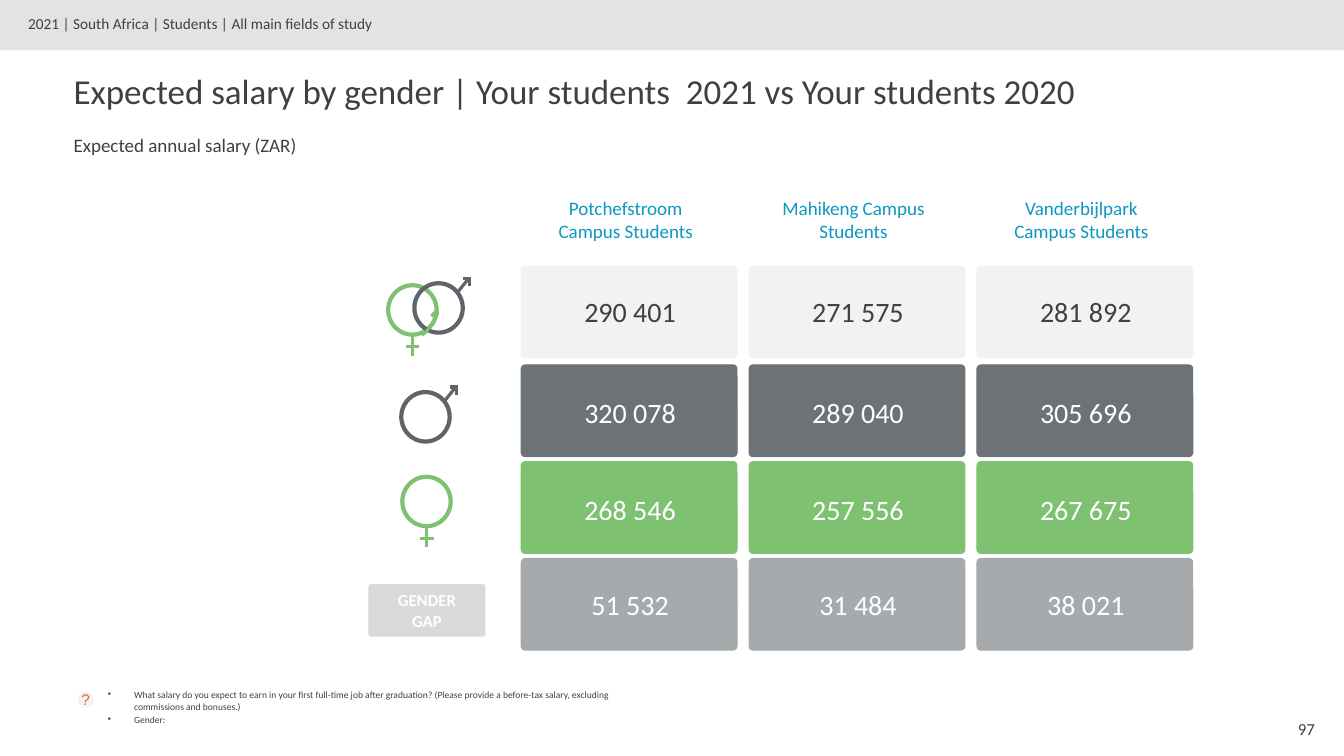
from dataclasses import dataclass

from lxml import etree
from pptx import Presentation
from pptx.dml.color import RGBColor
from pptx.enum.shapes import MSO_CONNECTOR as Connector
from pptx.enum.shapes import MSO_SHAPE as Shape
from pptx.enum.text import MSO_ANCHOR as Anchor
from pptx.enum.text import PP_ALIGN as Align
from pptx.oxml.ns import qn
from pptx.util import Inches, Pt


@dataclass(frozen=True)
class Theme:
    font: str = "Calibri"
    symbol_font: str = "Arial"
    text: str = "414041"
    white: str = "FFFFFF"
    band: str = "E2E3E4"
    badge: str = "F3F3F3"
    question: str = "F1612A"
    heading: str = "0E97C1"
    label: str = "D9D9D9"
    total: str = "F2F2F2"
    male: str = "6D7276"
    male_line: str = "5F636A"
    female: str = "7EC170"
    gap: str = "A7AAAD"
    title_size: float = 25
    value_size: float = 20
    heading_size: float = 13.6
    label_size: float = 12
    badge_size: float = 11
    crumb_size: float = 10.9
    note_size: float = 6.8


def write(frame, text, *, size, color, font, align=Align.LEFT, anchor=Anchor.TOP,
          bold=False, side=0.1, wrap=True, bullet_indent=0, gap=0):
    """Fill a text frame, with one paragraph for each line of text."""
    frame.word_wrap = wrap
    frame.vertical_anchor = anchor
    frame.margin_left = frame.margin_right = Inches(side)
    frame.margin_top = frame.margin_bottom = Inches(0.05)
    for index, line in enumerate(text.split("\n")):
        para = frame.paragraphs[0] if index == 0 else frame.add_paragraph()
        if bullet_indent:
            properties = para._p.get_or_add_pPr()
            properties.set("marL", str(Inches(bullet_indent)))
            properties.set("indent", str(-Inches(bullet_indent)))
            etree.SubElement(properties, qn("a:buChar")).set("char", "•")
        if index and gap:
            para.space_before = Pt(gap)
        para.alignment = align
        span = para.add_run()
        span.text = line
        span.font.name = font
        span.font.size = Pt(size)
        span.font.bold = bold
        span.font.color.rgb = RGBColor.from_string(color)


class SlideBuilder:
    def __init__(self, slide, theme):
        self.shapes = slide.shapes
        self.theme = theme

    def text(self, left, top, width, height, text, **style):
        box = self.shapes.add_textbox(*map(Inches, (left, top, width, height)))
        write(box.text_frame, text,
              **{"font": self.theme.font, "color": self.theme.text, **style})

    def shape(self, kind, left, top, width, height, fill=None, line=None, weight=0.75):
        shape = self.shapes.add_shape(kind, *map(Inches, (left, top, width, height)))
        shape.shadow.inherit = False
        if fill:
            shape.fill.solid()
            shape.fill.fore_color.rgb = RGBColor.from_string(fill)
        else:
            shape.fill.background()
        if line:
            shape.line.color.rgb = RGBColor.from_string(line)
            shape.line.width = Pt(weight)
        else:
            shape.line.fill.background()
        return shape

    def card(self, left, top, width, height, color):
        card = self.shape(Shape.ROUNDED_RECTANGLE, left, top, width, height, color, color)
        card.adjustments[0] = 0.043
        return card

    def line(self, x1, y1, x2, y2, color):
        line = self.shapes.add_connector(Connector.STRAIGHT, *map(Inches, (x1, y1, x2, y2)))
        line.line.color.rgb = RGBColor.from_string(color)
        line.line.width = Pt(2.25)
        etree.SubElement(line._element.spPr, qn("a:effectLst"))

    def gender_sign(self, left, top, color, strokes):
        """Draw a ring and its strokes, which are given relative to the ring's corner."""
        self.shape(Shape.FLOWCHART_CONNECTOR, left, top, 0.48, 0.49, line=color, weight=3)
        for x1, y1, x2, y2 in strokes:
            self.line(left + x1, top + y1, left + x2, top + y2, color)

    def male_sign(self, left, top):
        self.gender_sign(left, top, self.theme.male_line, [
            (0.48, -0.05, 0.56, -0.05), (0.55, -0.06, 0.55, 0.03), (0.54, -0.05, 0.42, 0.1)])

    def female_sign(self, left, top):
        self.gender_sign(left, top, self.theme.female, [
            (0.24, 0.49, 0.24, 0.7), (0.18, 0.61, 0.31, 0.61)])

    def ring_overlap(self):
        """Bring the female ring back over the male ring where they cross."""
        arc = self.shape(Shape.ARC, 4.12, 3.18, 0.28, 0.05,
                         line=self.theme.female, weight=2.25)
        arc.adjustments[0] = 161.64 * 0.6
        arc.adjustments[1] = 0
        arc.rotation = 123.6


CAMPUSES = [
    ("Potchefstroom Campus Students", ["290 401", "320 078", "268 546", "51 532"]),
    ("Mahikeng Campus Students", ["271 575", "289 040", "257 556", "31 484"]),
    ("Vanderbijlpark Campus Students", ["281 892", "305 696", "267 675", "38 021"]),
]


def add_frame(page, theme):
    page.shape(Shape.RECTANGLE, 0, 0, 13.33, 0.5, theme.band)
    page.text(0.17, 0.09, 11.36, 0.31,
              "2021 | South Africa | Students | All main fields of study",
              size=theme.crumb_size, side=0.11)
    page.text(0.62, 0.64, 12.55, 0.62,
              "Expected salary by gender | Your students  2021 vs Your students 2020",
              size=theme.title_size, side=0.11)
    page.text(0.62, 1.28, 12.54, 0.36, "Expected annual salary (ZAR)",
              size=theme.heading_size, side=0.11)
    badge = page.shape(Shape.FLOWCHART_CONNECTOR, 0.77, 6.86, 0.16, 0.16, theme.badge)
    write(badge.text_frame, "?", size=theme.badge_size, color=theme.question,
          font=theme.symbol_font, align=Align.CENTER, anchor=Anchor.MIDDLE,
          side=0.11, wrap=False)
    page.text(0.96, 6.79, 5.51, 0.22,
              "What salary do you expect to earn in your first full-time job after graduation? "
              "(Please provide a before-tax salary, excluding commissions and bonuses.)\nGender:",
              size=theme.note_size, side=0.11, bullet_indent=0.26, gap=1.4)
    page.text(12.16, 7.03, 0.98, 0.4, "97", size=theme.label_size,
              align=Align.RIGHT, anchor=Anchor.MIDDLE)


def add_row_signs(page, theme):
    page.female_sign(3.85, 2.83)
    page.male_sign(4.11, 2.81)
    page.ring_overlap()
    page.male_sign(3.98, 3.89)
    page.female_sign(3.99, 4.73)
    label = page.card(3.66, 5.8, 1.15, 0.51, theme.label)
    write(label.text_frame, "GENDER\nGAP", size=theme.label_size, color=theme.white,
          font=theme.font, align=Align.CENTER, anchor=Anchor.MIDDLE, bold=True)


def add_salaries(page, theme):
    rows = [  # card top, value top, card colour, value colour
        (2.64, 2.87, theme.total, theme.text),
        (3.62, 3.87, theme.male, theme.white),
        (4.58, 4.83, theme.female, theme.white),
        (5.54, 5.78, theme.gap, theme.white),
    ]
    for column, (campus, salaries) in enumerate(CAMPUSES):
        left = 5.17 + 2.26 * column
        page.text(left + 0.23, 1.89, 1.61, 0.56, campus, size=theme.heading_size,
                  color=theme.heading, align=Align.CENTER, anchor=Anchor.BOTTOM)
        for (top, value_top, fill, color), salary in zip(rows, salaries):
            page.card(left, top, 2.14, 0.91, fill)
            page.text(left + 0.06, value_top, 2.04, 0.44, salary, size=theme.value_size,
                      color=color, align=Align.CENTER, anchor=Anchor.MIDDLE)


def main():
    deck = Presentation()
    deck.slide_width, deck.slide_height = Inches(13.33), Inches(7.5)
    theme = Theme()
    page = SlideBuilder(deck.slides.add_slide(deck.slide_layouts[6]), theme)
    add_frame(page, theme)
    add_row_signs(page, theme)
    add_salaries(page, theme)
    deck.save("out.pptx")


if __name__ == "__main__":
    main()
